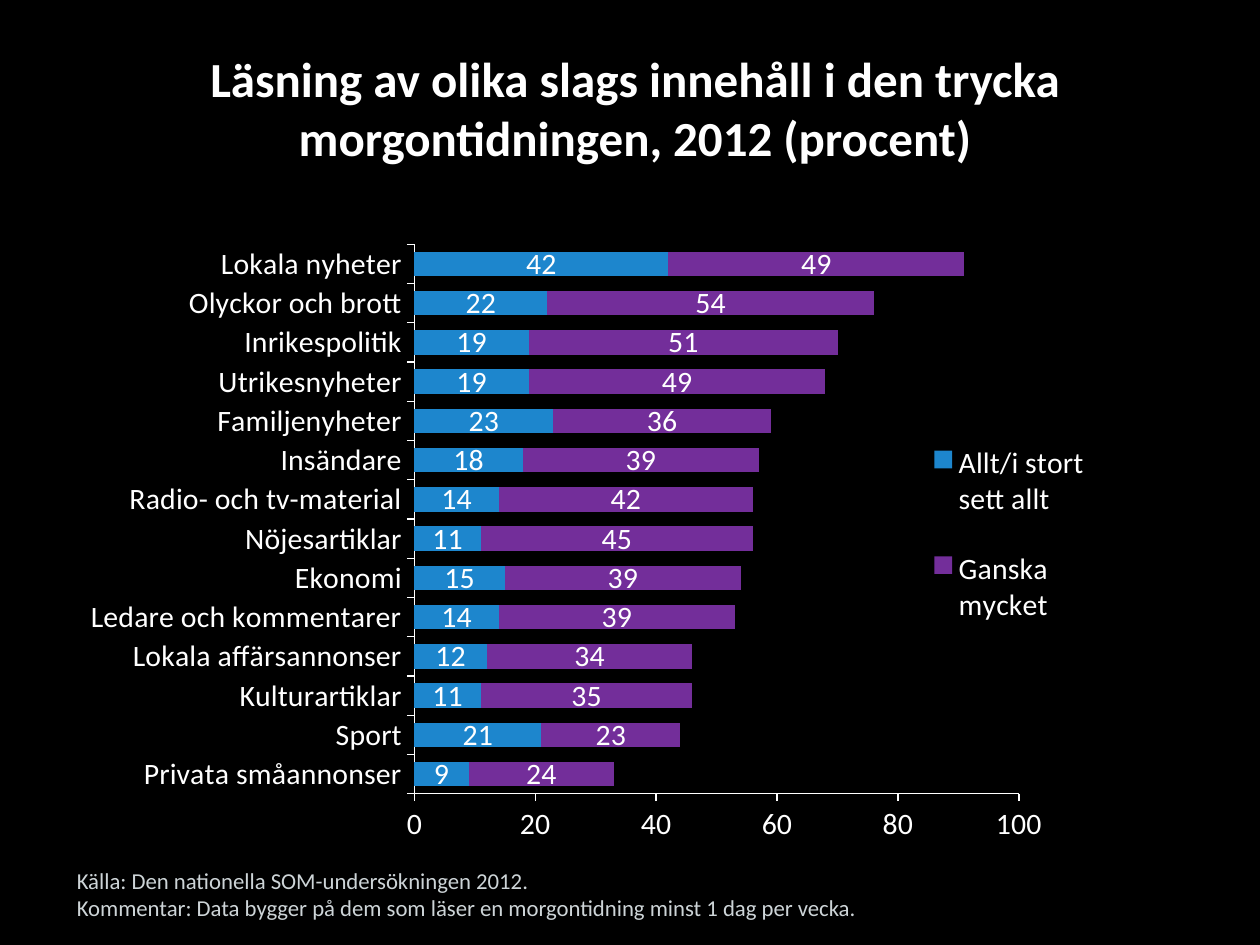
from lxml import etree
from pptx import Presentation
from pptx.chart import data as chart_data
from pptx.dml.color import RGBColor
from pptx.enum import chart as charts, text
from pptx.oxml import ns
from pptx.util import Cm, Pt

COLORS = {"back": "000000", "text": "FFFFFF", "note": "CDD4D7",
          "all": "1D86CD", "much": "732E9A"}
FONT = "Calibri"
TITLE = "Läsning av olika slags innehåll i den trycka morgontidningen, 2012 (procent)"
NOTES = ["Källa: Den nationella SOM-undersökningen 2012.",
         "Kommentar: Data bygger på dem som läser en morgontidning minst 1 dag per vecka."]
SERIES = {"Allt/i stort sett allt": "all", "Ganska mycket": "much"}
READING = [
    ("Privata småannonser", 9, 24),
    ("Sport", 21, 23),
    ("Kulturartiklar", 11, 35),
    ("Lokala affärsannonser", 12, 34),
    ("Ledare och kommentarer", 14, 39),
    ("Ekonomi", 15, 39),
    ("Nöjesartiklar", 11, 45),
    ("Radio- och tv-material", 14, 42),
    ("Insändare", 18, 39),
    ("Familjenyheter", 23, 36),
    ("Utrikesnyheter", 19, 49),
    ("Inrikespolitik", 19, 51),
    ("Olyckor och brott", 22, 54),
    ("Lokala nyheter", 42, 49),
]


def color(name):
    """Return a palette colour."""
    return RGBColor.from_string(COLORS[name])


def style_font(font, size, name="text", bold=False):
    """Set face, size, colour and weight of a font."""
    font.name, font.size, font.bold = FONT, Pt(size), bold
    font.color.rgb = color(name)


def add_text(page, box, lines, size, name, align, anchor, bold=False):
    """Place a wrapped text box with one paragraph per line."""
    frame = page.shapes.add_textbox(*box).text_frame
    frame.word_wrap = True
    frame.vertical_anchor = anchor
    frame.text = "\n".join(lines)
    for para in frame.paragraphs:
        para.alignment = align
        for span in para.runs:
            style_font(span.font, size, name, bold)


def set_layout(parent, index, area, inner=False):
    """Give a chart part a manual layout in fractions of the chart."""
    for old in parent.findall(ns.qn("c:layout")):
        parent.remove(old)
    layout = etree.Element(ns.qn("c:layout"))
    manual = etree.SubElement(layout, ns.qn("c:manualLayout"))
    settings = [("layoutTarget", "inner")] if inner else []
    settings += [("xMode", "edge"), ("yMode", "edge"), *zip("xywh", area)]
    for tag, value in settings:
        etree.SubElement(manual, ns.qn(f"c:{tag}")).set("val", str(value))
    parent.insert(index, layout)


def style_axis(axis):
    """Draw a thin light axis with outside ticks and no grid."""
    axis.has_major_gridlines = False
    axis.major_tick_mark = charts.XL_TICK_MARK.OUTSIDE
    axis.minor_tick_mark = charts.XL_TICK_MARK.NONE
    axis.format.line.color.rgb = color("text")
    axis.format.line.width = Pt(0.75)


def add_reading_chart(page, box):
    """Place the stacked bar chart of reading habits."""
    names, *columns = zip(*READING)
    data = chart_data.CategoryChartData()
    data.categories = names
    for label, values in zip(SERIES, columns):
        data.add_series(label, values)
    chart = page.shapes.add_chart(charts.XL_CHART_TYPE.BAR_STACKED, *box, data).chart
    style_font(chart.font, 17)
    chart.has_title = False
    chart.has_legend = True
    chart.legend.position = charts.XL_LEGEND_POSITION.RIGHT
    chart.legend.include_in_layout = False
    style_font(chart.legend.font, 17)
    set_layout(chart.legend._element, 1, (0.76, 0.3, 0.18, 0.4))

    plot = chart.plots[0]
    plot.gap_width, plot.overlap = 60, 100
    plot.vary_by_categories = False
    plot.has_data_labels = True
    plot.data_labels.show_value = True
    style_font(plot.data_labels.font, 17)
    for series, name in zip(plot.series, SERIES.values()):
        series.format.fill.solid()
        series.format.fill.fore_color.rgb = color(name)
    style_axis(chart.category_axis)
    style_axis(chart.value_axis)
    chart.value_axis.minimum_scale = 0
    chart.value_axis.maximum_scale = 100
    chart.value_axis.major_unit = 20
    plot_area = chart._chartSpace.chart.plotArea
    set_layout(plot_area, 0, (0.301, 0.025, 0.558, 0.901), inner=True)


def main():
    """Build and save the slide."""
    deck = Presentation()
    deck.slide_width, deck.slide_height = Cm(25.4), Cm(19.05)
    page = deck.slides.add_slide(deck.slide_layouts[6])
    page.background.fill.solid()
    page.background.fill.fore_color.rgb = color("back")
    left, width = Cm(1.3), Cm(23)
    add_text(page, (left, Cm(0.64), width, Cm(2.84)), [TITLE], 28, "text",
             text.PP_ALIGN.CENTER, text.MSO_ANCHOR.BOTTOM, bold=True)
    add_reading_chart(page, (Cm(1.78), Cm(4.62), Cm(21.84), Cm(12.37)))
    add_text(page, (left, Cm(17.32), width, Cm(1.4)), NOTES, 13, "note",
             text.PP_ALIGN.JUSTIFY, text.MSO_ANCHOR.MIDDLE)
    deck.save("out.pptx")


if __name__ == "__main__":
    main()
